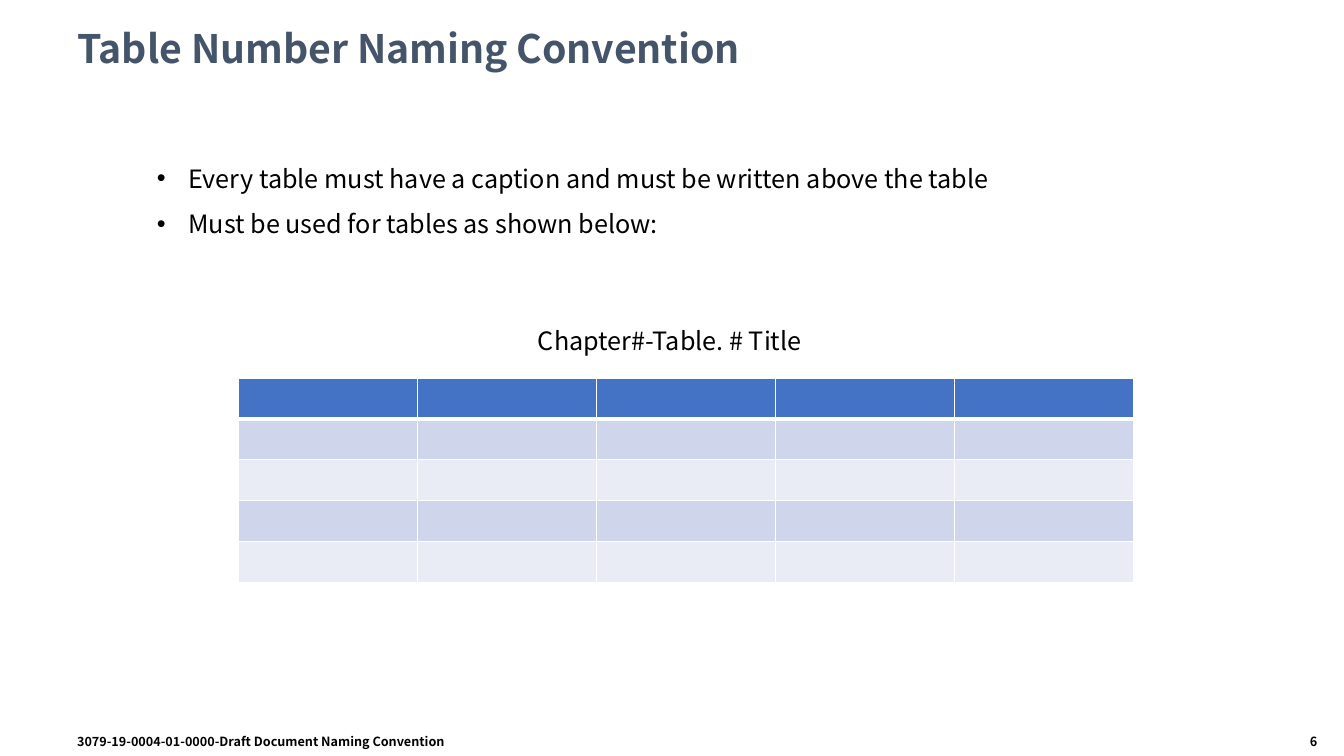
from lxml.etree import SubElement
from pptx import Presentation
from pptx.dml.color import RGBColor as RGB
from pptx.enum.text import MSO_ANCHOR as Anchor, MSO_AUTO_SIZE as Fit, PP_ALIGN as Align
from pptx.oxml import parse_xml
from pptx.oxml.ns import nsdecls, qn
from pptx.util import Pt


def tint(code):
    return RGB.from_string(code)


class Page:
    font = "Noto Sans CJK KR"
    ink = "000000"
    navy = "44546A"
    head = "4472C4"
    bands = ("CFD5EA", "E9EBF5")
    rule = "FFFFFF"

    def __init__(self, deck):
        self.slide = deck.slides.add_slide(deck.slide_layouts[5])

    def say(self, para, text, size, color=None, bold=False):
        run = para.add_run()
        run.text = text
        run.font.name = self.font
        run.font.size = Pt(size)
        run.font.bold = bold
        run.font.color.rgb = tint(color or self.ink)

    def title(self, text, left, top, width, height):
        box = self.slide.shapes.title
        box.left, box.top, box.width, box.height = map(Pt, (left, top, width, height))
        frame = box.text_frame
        frame.word_wrap = True
        frame.auto_size = Fit.NONE
        frame.vertical_anchor = Anchor.MIDDLE
        para = frame.paragraphs[0]
        para.alignment = Align.LEFT
        para.line_spacing = 0.9
        self.say(para, text, 28, self.navy, True)

    def frame(self, left, top, width, height, wrap):
        box = self.slide.shapes.add_textbox(Pt(left), Pt(top), Pt(width), Pt(height))
        frame = box.text_frame
        frame.word_wrap = wrap
        frame.auto_size = Fit.NONE if wrap else Fit.SHAPE_TO_FIT_TEXT
        return frame

    def label(self, text, left, top, width, height, size, align, bold=False, wrap=True):
        para = self.frame(left, top, width, height, wrap).paragraphs[0]
        para.alignment = align
        self.say(para, text, size, bold=bold)

    def bullets(self, items, left, top, width, height):
        frame = self.frame(left, top, width, height, False)
        for index, item in enumerate(items):
            para = frame.add_paragraph() if index else frame.paragraphs[0]
            props = para._p.get_or_add_pPr()
            props.set("marL", str(Pt(22.5)))
            props.set("indent", str(Pt(-22.5)))
            SubElement(props, qn("a:buFont")).set("typeface", "Arial")
            SubElement(props, qn("a:buChar")).set("char", "•")
            para.line_spacing = 1.5
            self.say(para, item, 18)

    def border(self, cell, widths):
        props = cell._tc.get_or_add_tcPr()
        for index, (side, width) in enumerate(zip("LRTB", widths)):
            props.insert(index, parse_xml(
                f'<a:ln{side} {nsdecls("a")} w="{Pt(width)}"><a:solidFill>'
                f'<a:srgbClr val="{self.rule}"/></a:solidFill></a:ln{side}>'))

    def table(self, rows, cols, left, top, width, height):
        grid = self.slide.shapes.add_table(
            rows, cols, Pt(left), Pt(top), Pt(width), Pt(height)).table
        for col in grid.columns:
            col.width = Pt(width / cols)
        for index, row in enumerate(grid.rows):
            row.height = Pt(height / rows)
            for cell in row.cells:
                cell.margin_top = cell.margin_bottom = 0
                cell.fill.solid()
                cell.fill.fore_color.rgb = tint(self.bands[(index - 1) % 2] if index else self.head)
                self.border(cell, (1, 1, 3 if index == 1 else 1, 1 if index else 3))


def main():
    deck = Presentation()
    deck.slide_width, deck.slide_height = Pt(960), Pt(540)
    page = Page(deck)
    page.bullets(["Every table must have a caption and must be written above the table",
                  "Must be used for tables as shown below:"], 105, 102, 615, 68.4)
    page.table(5, 5, 170, 270, 640, 146)
    page.label("Chapter#-Table. # Title ", 376, 228.5, 209, 29, 18, Align.CENTER, wrap=False)
    page.title("Table Number Naming Convention", 48, 12, 864, 48)
    page.label("3079-19-0004-01-0000-Draft Document Naming Convention",
               48, 520.5, 424, 19.5, 9, Align.LEFT, True)
    page.label("6", 792, 520.5, 156, 19.5, 9, Align.RIGHT, True)
    deck.save("out.pptx")


if __name__ == "__main__":
    main()
